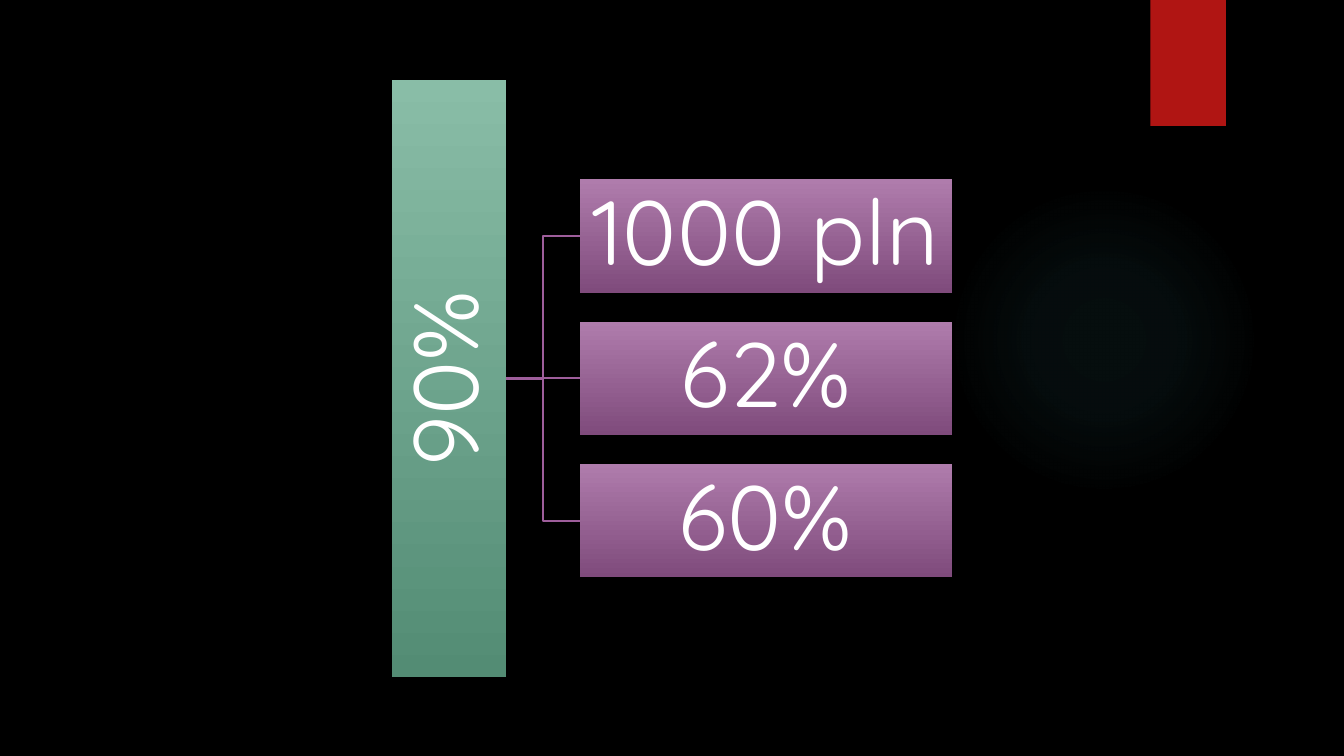
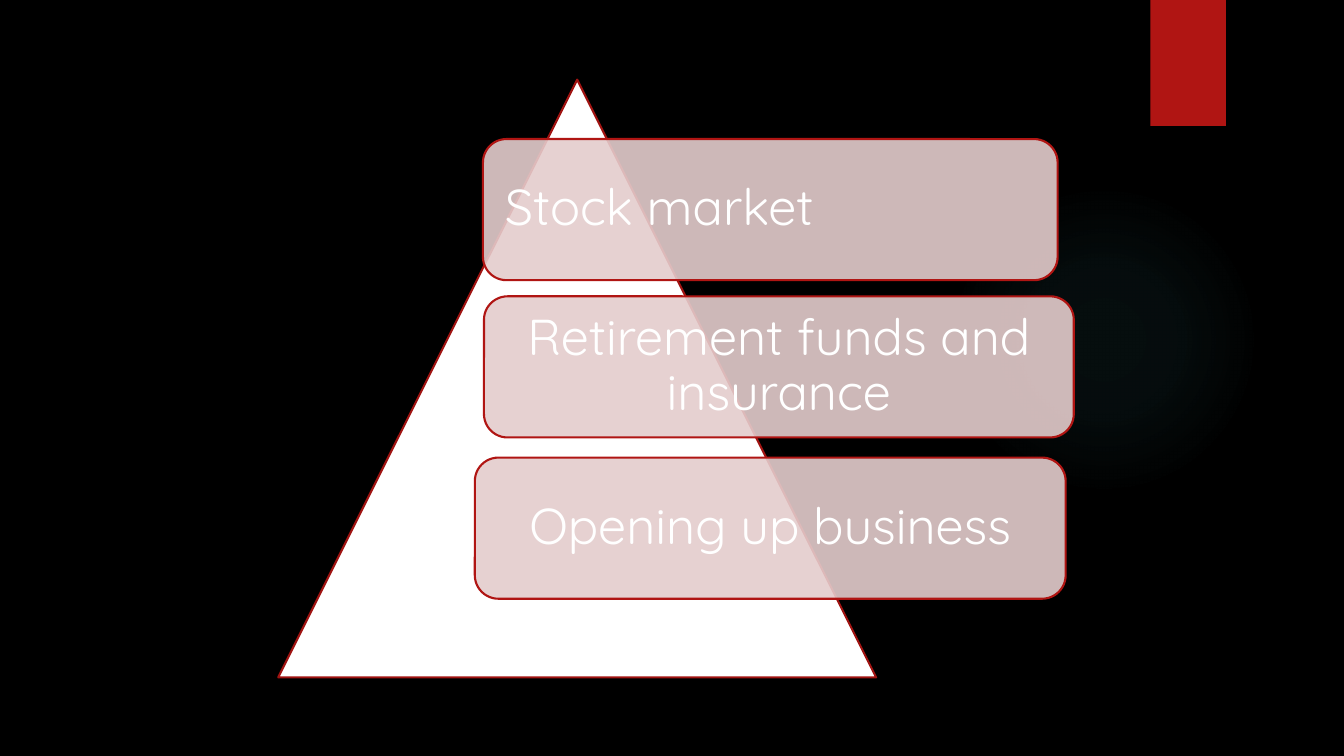
from dataclasses import dataclass

from lxml.etree import SubElement
from pptx import Presentation
from pptx.dml.color import RGBColor as RGB
from pptx.enum.shapes import MSO_CONNECTOR as CONN, MSO_SHAPE as SHAPE
from pptx.enum.text import MSO_ANCHOR as ANCHOR, PP_ALIGN as ALIGN
from pptx.oxml import parse_xml
from pptx.oxml.ns import nsdecls, qn
from pptx.shapes.autoshape import Shape
from pptx.slide import Slide, SlideLayout
from pptx.util import Inches, Pt


@dataclass(frozen=True)
class Theme:
    font: str = "Quicksand"
    background: str = "000000"
    text: str = "FFFFFF"
    ribbon: str = "B01513"
    glow: str = "50B9C1"
    root: tuple[str, str] = ("89BDA7", "538C74")
    branch: tuple[str, str] = ("AF7CAC", "7F4B7C")
    link: str = "9E5E9B"
    pyramid: str = "FFFFFF"
    pyramid_line: str = "A01311"
    card: str = "E4CCCC"
    card_line: str = "B01513"
    card_opacity: int = 90
    figure_size: int = 65
    card_size: int = 36
    line_width: float = 1.5


@dataclass(frozen=True)
class Box:
    left: float
    top: float
    width: float
    height: float


@dataclass(frozen=True)
class Card:
    text: str
    box: Box
    align: ALIGN = ALIGN.CENTER


THEME = Theme()
GLOW_STOPS = ((0, 7), (36, 6), (69, 0))  # position and opacity, percent

ROOT = Box(3.89, 0.79, 1.13, 5.93)
BRANCHES = ("1000 pln", "62%", "60%")
BRANCH_LEFT, BRANCH_TOP, BRANCH_PITCH = 5.75, 1.78, 1.41
BRANCH_WIDTH, BRANCH_HEIGHT = 3.69, 1.13

PYRAMID = Box(2.76, 0.79, 5.93, 5.93)
CARDS = (
    Card("Stock market", Box(4.79, 1.38, 5.7, 1.4), ALIGN.LEFT),
    Card("Retirement funds and insurance", Box(4.8, 2.94, 5.85, 1.4)),
    Card("Opening up business", Box(4.71, 4.54, 5.86, 1.4)),
)


def add_shape(s: Slide, kind: SHAPE, box: Box, fill: str | tuple[str, str],
              line: str | None = None) -> Shape:
    """Add a shape; a pair of colours gives a gradient from top to bottom."""
    sp = s.shapes.add_shape(kind, Inches(box.left), Inches(box.top),
                            Inches(box.width), Inches(box.height))
    sp.shadow.inherit = False
    if isinstance(fill, str):
        sp.fill.solid()
        sp.fill.fore_color.rgb = RGB.from_string(fill)
    else:
        sp.fill.gradient()
        sp.fill.gradient_angle = 270
        for stop, color in zip(sp.fill.gradient_stops, fill):
            stop.color.rgb = RGB.from_string(color)
    if line:
        sp.line.color.rgb = RGB.from_string(line)
        sp.line.width = Pt(THEME.line_width)
    else:
        sp.line.fill.background()
    return sp


def add_text(sp: Shape, text: str, size: int, inset: float,
             align: ALIGN = ALIGN.CENTER) -> None:
    tf = sp.text_frame
    margins = {f"margin_{side}": Inches(inset)
               for side in ("left", "top", "right", "bottom")}
    p = tf.paragraphs[0]
    r = p.add_run()
    r.text = text
    formats = (
        (tf, {"word_wrap": True, "vertical_anchor": ANCHOR.MIDDLE, **margins}),
        (p, {"alignment": align, "line_spacing": 0.9}),
        (r.font, {"name": THEME.font, "size": Pt(size)}),
    )
    for target, values in formats:
        for name, value in values.items():
            setattr(target, name, value)
    r.font.color.rgb = RGB.from_string(THEME.text)


def set_opacity(sp: Shape, percent: int) -> None:
    color = sp.element.spPr.find(qn("a:solidFill")).find(qn("a:srgbClr"))
    SubElement(color, qn("a:alpha"), val=str(percent * 1000))


def set_glow(sp: Shape) -> None:
    """Replace the solid fill with a radial one that fades out."""
    stops = "".join(
        f'<a:gs pos="{pos * 1000}"><a:srgbClr val="{THEME.glow}">'
        f'<a:alpha val="{opacity * 1000}"/></a:srgbClr></a:gs>'
        for pos, opacity in GLOW_STOPS)
    grad = parse_xml(
        f'<a:gradFill {nsdecls("a")}><a:gsLst>{stops}</a:gsLst>'
        '<a:path path="circle"><a:fillToRect l="50000" t="50000" '
        'r="50000" b="50000"/></a:path></a:gradFill>')
    spPr = sp.element.spPr
    spPr.replace(spPr.find(qn("a:solidFill")), grad)


def decorate_layout(layout: SlideLayout, s: Slide) -> None:
    """Draw the shared parts on a slide and move them to its layout."""
    fill = layout.background.fill
    fill.solid()
    fill.fore_color.rgb = RGB.from_string(THEME.background)
    glow = add_shape(s, SHAPE.OVAL, Box(9.41, 1.83, 3.08, 3.08), THEME.glow)
    set_glow(glow)
    ribbon = add_shape(s, SHAPE.RECTANGLE, Box(11.41, 0, 0.75, 1.25), THEME.ribbon)
    for sp in (glow, ribbon):
        layout.element.cSld.spTree.append(sp.element)


def link(s: Slide, start: Shape, end: Shape) -> None:
    """Join the right side of one shape to the left side of another."""
    level = start.top + start.height // 2 == end.top + end.height // 2
    kind = CONN.STRAIGHT if level else CONN.ELBOW
    line = s.shapes.add_connector(
        kind, start.left + start.width, start.top + start.height // 2,
        end.left, end.top + end.height // 2)
    line.begin_connect(start, 3)
    line.end_connect(end, 1)
    line.line.color.rgb = RGB.from_string(THEME.link)
    line.line.width = Pt(THEME.line_width)
    SubElement(line.element.spPr, qn("a:effectLst"))


def draw_hierarchy(s: Slide) -> None:
    root = add_shape(s, SHAPE.RECTANGLE, ROOT, THEME.root)
    add_text(root, "90%", THEME.figure_size, 0.05)
    root.text_frame._txBody.bodyPr.set("vert", "vert270")
    for i, text in enumerate(BRANCHES):
        box = Box(BRANCH_LEFT, BRANCH_TOP + i * BRANCH_PITCH,
                  BRANCH_WIDTH, BRANCH_HEIGHT)
        branch = add_shape(s, SHAPE.RECTANGLE, box, THEME.branch)
        add_text(branch, text, THEME.figure_size, 0.05)
        link(s, root, branch)


def draw_pyramid(s: Slide) -> None:
    add_shape(s, SHAPE.ISOSCELES_TRIANGLE, PYRAMID, THEME.pyramid, THEME.pyramid_line)
    for card in CARDS:
        sp = add_shape(s, SHAPE.ROUNDED_RECTANGLE, card.box, THEME.card, THEME.card_line)
        set_opacity(sp, THEME.card_opacity)
        add_text(sp, card.text, THEME.card_size, 0.15, card.align)


def main() -> None:
    prs = Presentation()
    prs.slide_width, prs.slide_height = Inches(13.33), Inches(7.5)
    blank = prs.slide_layouts[6]
    hierarchy, pyramid = (prs.slides.add_slide(blank) for _ in range(2))
    decorate_layout(blank, hierarchy)
    draw_hierarchy(hierarchy)
    draw_pyramid(pyramid)
    prs.save("out.pptx")


if __name__ == "__main__":
    main()
